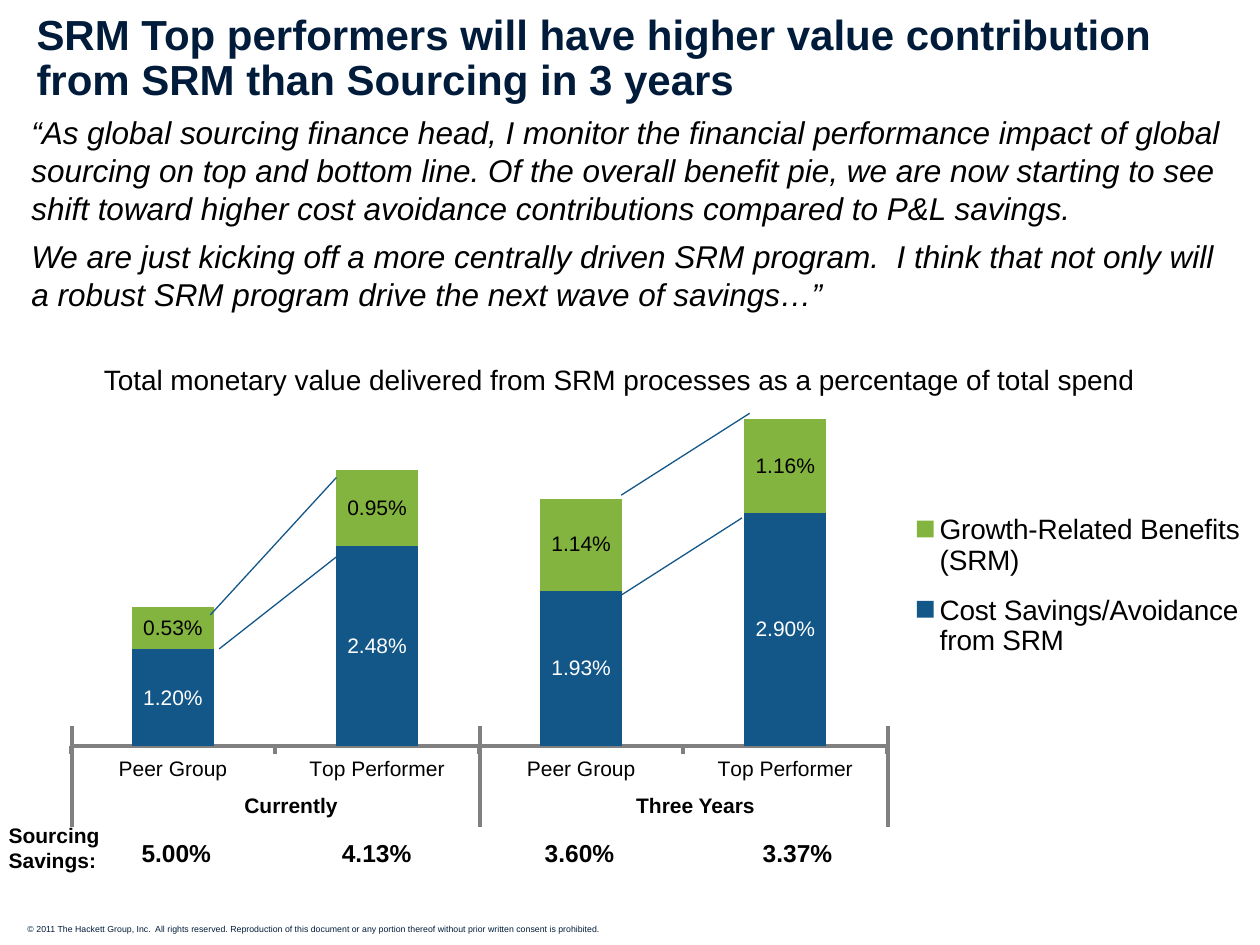
"""Build the slide on value delivered from SRM processes."""
from dataclasses import dataclass

from lxml.etree import SubElement
from pptx import Presentation
from pptx.chart.data import CategoryChartData
from pptx.dml.color import RGBColor
from pptx.enum.chart import XL_CHART_TYPE, XL_LABEL_POSITION, XL_LEGEND_POSITION, XL_TICK_MARK
from pptx.enum.shapes import MSO_CONNECTOR, MSO_SHAPE
from pptx.enum.text import MSO_ANCHOR, MSO_AUTO_SIZE, PP_ALIGN
from pptx.oxml import parse_xml
from pptx.oxml.ns import nsdecls, qn
from pptx.util import Inches, Pt

NAVY, BLUE, GREEN = "001C3A", "135789", "84B440"
GREY, BLACK, WHITE = "808080", "000000", "FFFFFF"
QUOTE = (
    "“As global sourcing finance head, I monitor the financial performance impact of global "
    "sourcing on top and bottom line. Of the overall benefit pie, we are now starting to see "
    "shift toward higher cost avoidance contributions compared to P&L savings.",
    "We are just kicking off a more centrally driven SRM program.  I think that not only will "
    "a robust SRM program drive the next wave of savings…”",
)


@dataclass
class Style:
    size: float
    color: str = BLACK
    bold: bool = False
    italic: bool = False


@dataclass
class Label:
    lines: tuple
    box: tuple
    style: Style
    align: PP_ALIGN = PP_ALIGN.CENTER
    wrap: bool = True


@dataclass
class Line:
    start: tuple
    end: tuple
    color: str
    width: float


@dataclass
class Series:
    name: str
    values: tuple
    fill: str
    text: str


BOLD = Style(12, bold=True)
LABELS = [
    Label(("© 2011 The Hackett Group, Inc.  All rights reserved. Reproduction of this document "
           "or any portion thereof without prior written consent is prohibited.",),
          (0.12, 7.28, 6.14, 0.18), Style(5, NAVY), PP_ALIGN.LEFT),
    Label(("Total monetary value delivered from SRM processes as a percentage of total spend",),
          (0.43, 2.83, 8.97, 0.37), Style(16)),
    Label(("Currently",), (1.74, 6.24, 1.14, 0.3), BOLD),
    Label(("Three Years",), (4.88, 6.24, 1.28, 0.3), BOLD),
    Label(("Sourcing", "Savings:"), (-0.03, 6.48, 1.05, 0.5), BOLD, PP_ALIGN.LEFT),
]
SAVINGS = {"5.00%": 1.02, "4.13%": 2.61, "3.60%": 4.22, "3.37%": 5.95}
LABELS += [Label((text,), (left, 6.6, 0.76, 0.34), Style(14, bold=True), wrap=False)
           for text, left in SAVINGS.items()]
LINES = [Line((x, 5.76), (x, 6.56), GREY, 2.25) for x in (0.57, 3.81, 7.05)]
LINES += [Line(start, end, BLUE, 0.75) for start, end in (
    ((1.67, 4.88), (2.67, 3.79)), ((4.93, 3.93), (5.95, 3.28)),
    ((4.92, 4.73), (5.89, 4.11)), ((1.74, 5.15), (2.67, 4.42)))]
SERIES = [
    Series("Cost Savings/Avoidance from SRM", (0.012, 0.0248, 0.0193, 0.029), BLUE, WHITE),
    Series("Growth-Related Benefits (SRM)", (0.0053, 0.0095, 0.0114, 0.0116), GREEN, BLACK),
]


def rgb(color: str) -> RGBColor:
    return RGBColor.from_string(color)


def set_font(font, style: Style) -> None:
    font.name, font.size = "Arial", Pt(style.size)
    font.bold, font.italic = style.bold, style.italic
    font.color.rgb = rgb(style.color)


def add_text(frame, lines: tuple, style: Style, align=PP_ALIGN.LEFT, gap: float = 0) -> None:
    for i, line in enumerate(lines):
        par = frame.add_paragraph() if i else frame.paragraphs[0]
        par.alignment = align
        if i and gap:
            par.space_before = Pt(gap)
        run = par.add_run()
        run.text = line
        set_font(run.font, style)


def add_title(slide) -> None:
    title = slide.shapes.title
    title.left, title.top, title.width, title.height = map(Inches, (0.21, 0, 9.69, 0.87))
    frame = title.text_frame
    frame.auto_size, frame.word_wrap = MSO_AUTO_SIZE.NONE, True
    frame.vertical_anchor = MSO_ANCHOR.BOTTOM
    frame.margin_left = frame.margin_right = Inches(0.08)
    frame.margin_top = frame.margin_bottom = Inches(0.04)
    add_text(frame, ("SRM Top performers will have higher value contribution "
                     "from SRM than Sourcing in 3 years",), Style(24, NAVY, bold=True))
    frame.paragraphs[0].line_spacing = 0.9


def add_label(slide, label: Label) -> None:
    frame = slide.shapes.add_textbox(*map(Inches, label.box)).text_frame
    frame.word_wrap = label.wrap
    frame.auto_size = MSO_AUTO_SIZE.SHAPE_TO_FIT_TEXT
    add_text(frame, label.lines, label.style, label.align)


def add_line(slide, line: Line) -> None:
    shape = slide.shapes.add_connector(
        MSO_CONNECTOR.STRAIGHT, *map(Inches, line.start + line.end))
    shape.line.color.rgb, shape.line.width = rgb(line.color), Pt(line.width)
    SubElement(shape._element.spPr, qn("a:effectLst"))


def add_quote(slide) -> None:
    shape = slide.shapes.add_shape(
        MSO_SHAPE.RECTANGLE, *map(Inches, (0.15, 0.85, 9.69, 1.7)))
    shape.shadow.inherit = False
    shape.fill.solid()
    shape.fill.fore_color.rgb = rgb(WHITE)
    shape.line.fill.background()
    frame = shape.text_frame
    frame.word_wrap, frame.vertical_anchor = True, MSO_ANCHOR.TOP
    add_text(frame, QUOTE, Style(18, italic=True), gap=6)


def set_place(node, index: int, box: tuple, inner: bool = False) -> None:
    for old in node.findall(qn("c:layout")):
        node.remove(old)
    parts = '<c:layoutTarget val="inner"/>' if inner else ""
    parts += "".join(f'<c:{key}Mode val="edge"/>' for key in "xy")
    parts += "".join(f'<c:{key} val="{val}"/>' for key, val in zip("xywh", box))
    node.insert(index, parse_xml(
        f'<c:layout {nsdecls("c")}><c:manualLayout>{parts}</c:manualLayout></c:layout>'))


def add_bars(slide) -> None:
    data = CategoryChartData(number_format="0.00%")
    data.categories = ("Peer Group", "Top Performer") * 2
    for item in SERIES:
        data.add_series(item.name, item.values)
    chart = slide.shapes.add_chart(
        XL_CHART_TYPE.COLUMN_STACKED, *map(Inches, (0.4, 2.8, 9.6, 3.42)), data).chart
    set_font(chart.font, Style(12))
    chart.has_title = False
    chart.has_legend = True
    legend = chart.legend
    legend.position, legend.include_in_layout = XL_LEGEND_POSITION.RIGHT, False
    set_font(legend.font, Style(16))
    set_place(legend._element, 1, (0.7, 0.33, 0.3, 0.42))
    set_place(chart._chartSpace.chart.plotArea, 0, (0.017, 0.072, 0.675, 0.841), True)
    axis = chart.category_axis
    axis.major_tick_mark = XL_TICK_MARK.OUTSIDE
    axis.format.line.color.rgb, axis.format.line.width = rgb(GREY), Pt(2.25)
    scale = chart.value_axis
    scale.minimum_scale, scale.maximum_scale = 0, 0.045
    scale.has_major_gridlines = scale.visible = False
    plot = chart.plots[0]
    plot.gap_width, plot.overlap, plot.vary_by_categories = 150, 100, False
    for bars, item in zip(plot.series, SERIES):
        bars.format.fill.solid()
        bars.format.fill.fore_color.rgb = rgb(item.fill)
        tags = bars.data_labels
        tags.show_value, tags.position = True, XL_LABEL_POSITION.CENTER
        tags.number_format, tags.number_format_is_linked = "0.00%", False
        set_font(tags.font, Style(12, item.text))


def main() -> None:
    deck = Presentation()
    deck.slide_width, deck.slide_height = Inches(10), Inches(7.5)
    slide = deck.slides.add_slide(deck.slide_layouts[5])
    add_title(slide)
    add_bars(slide)
    for label in LABELS:
        add_label(slide, label)
    for line in LINES:
        add_line(slide, line)
    add_quote(slide)
    deck.save("out.pptx")


if __name__ == "__main__":
    main()
